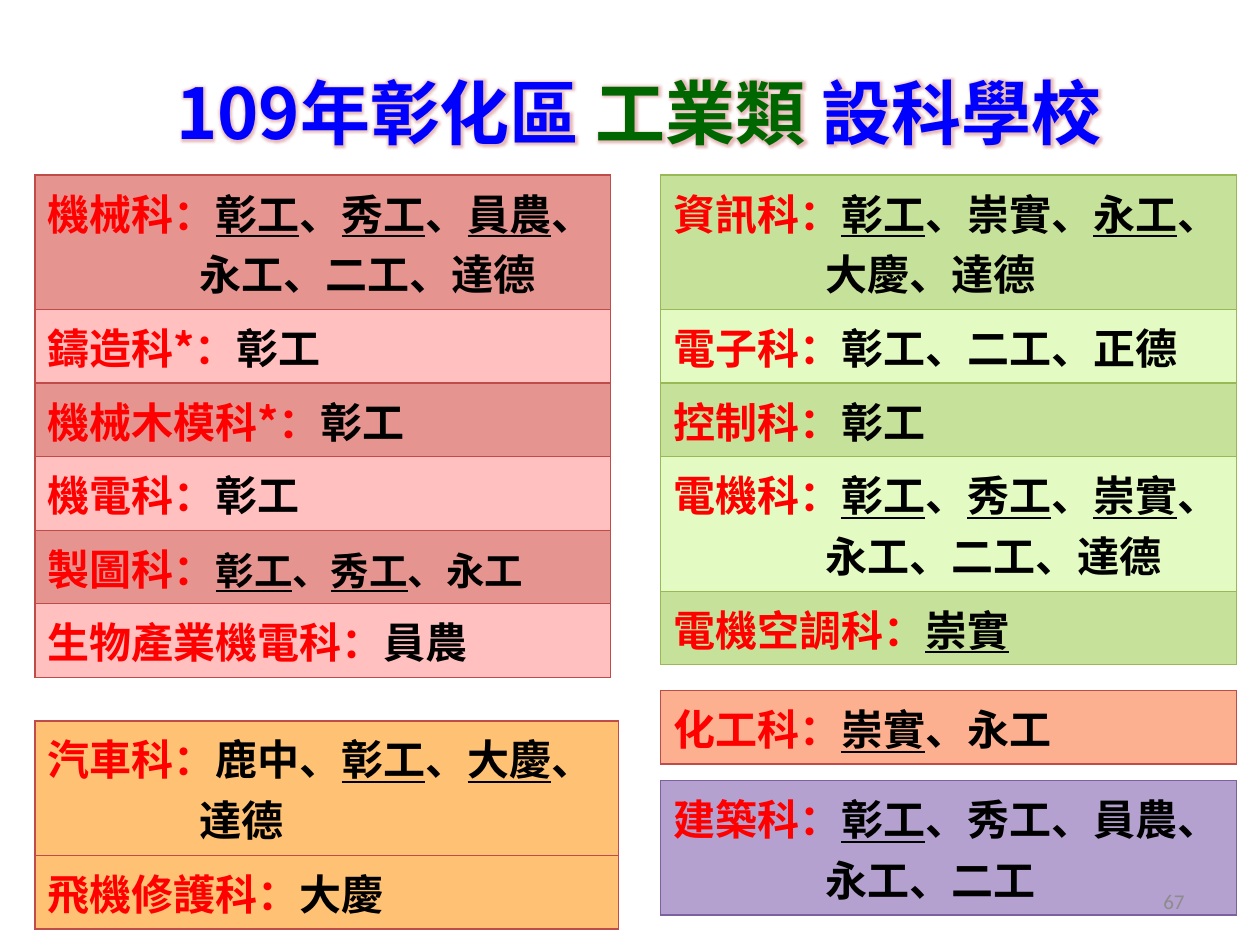
"""Build the slide of industrial departments and the schools that offer them."""
from dataclasses import dataclass

from lxml.etree import SubElement, fromstring
from pptx import Presentation
from pptx.dml.color import RGBColor as Rgb
from pptx.enum.text import MSO_ANCHOR as Anchor, PP_ALIGN as Align
from pptx.oxml.ns import nsdecls, qn
from pptx.util import Pt


@dataclass(frozen=True)
class Theme:
    cjk: str = "Noto Sans CJK SC"
    latin: str = "Calibri"
    title_size: float = 40
    body_size: float = 24
    small_size: float = 22
    number_size: float = 12
    blue: str = "0000FF"
    green: str = "006600"
    red: str = "FF0000"
    black: str = "000000"
    gray: str = "8C8C8C"
    glow: str = "C0504D"
    red_border: str = "BF4C48"
    green_border: str = "98B955"
    purple_border: str = "7D60A0"
    red_bands: tuple = ("E69490", "FFC0BF")
    green_bands: tuple = ("C6E19A", "E3FBC2")
    orange_bands: tuple = ("FFC174", "FFC174")
    coral_bands: tuple = ("FDB08F", "FDB08F")
    purple_bands: tuple = ("B4A1CF", "B4A1CF")


theme = Theme()


def write(para, text, size, color, font=theme.cjk, bold=True, underline=False):
    span = para.add_run()
    span.text = text
    span.font.size = Pt(size)
    span.font.bold = bold
    span.font.underline = underline
    span.font.color.rgb = Rgb.from_string(color)
    span.font.name = font
    SubElement(span.font._element, qn("a:ea"), typeface=font)
    return span


def paint(cell, fill, border):
    cell.fill.solid()
    cell.fill.fore_color.rgb = Rgb.from_string(fill)
    for place, side in enumerate(("lnL", "lnR", "lnT", "lnB")):
        line = fromstring(
            f'<a:{side} {nsdecls("a")} w="9525"><a:solidFill>'
            f'<a:srgbClr val="{border}"/></a:solidFill></a:{side}>')
        cell._tc.tcPr.insert(place, line)


deck = Presentation()
deck.slide_width, deck.slide_height = Pt(720), Pt(540)
page = deck.slides.add_slide(deck.slide_layouts[5])

title = page.shapes.title
title.left, title.top, title.width, title.height = Pt(41), Pt(36), Pt(648), Pt(55.5)
title.text_frame.vertical_anchor = Anchor.MIDDLE
heading = title.text_frame.paragraphs[0]
heading.alignment = Align.CENTER
for text, color in (("109年彰化區 ", theme.blue), ("工業類 ", theme.green),
                    ("設科學校", theme.blue)):
    span = write(heading, text, theme.title_size, color)
    glow = fromstring(
        f'<a:effectLst {nsdecls("a")}><a:glow rad="63500"><a:srgbClr val="{theme.glow}">'
        '<a:alpha val="40000"/></a:srgbClr></a:glow></a:effectLst>')
    span.font._element.find(qn("a:solidFill")).addnext(glow)

# Underscores enclose the underlined schools.
LEFT, RIGHT, WIDTH = 20, 377.5, 329
LINE, PADDING, HANG = 34.8, 7.2, 87
body, small = theme.body_size, theme.small_size
tables = [
    (LEFT, 100, WIDTH, theme.red_bands, theme.red_border, [
        ("機械科：", "_彰工_、_秀工_、_員農_、\n永工、二工、達德", body),
        ("鑄造科*：", "彰工", body),
        ("機械木模科*：", "彰工", body),
        ("機電科：", "彰工", body),
        ("製圖科：", "_彰工_、_秀工_、永工", small),
        ("生物產業機電科：", "員農", body)]),
    (RIGHT, 394.5, WIDTH, theme.coral_bands, theme.red_border, [
        ("化工科：", "_崇實_、永工", body)]),
    (LEFT, 412, 333.5, theme.orange_bands, theme.red_border, [
        ("汽車科：", "鹿中、_彰工_、_大慶_、\n達德", body),
        ("飛機修護科：", "大慶", body)]),
    (RIGHT, 100, WIDTH, theme.green_bands, theme.green_border, [
        ("資訊科：", "_彰工_、崇實、_永工_、\n大慶、達德", body),
        ("電子科：", "彰工、二工、正德", body),
        ("控制科：", "彰工", body),
        ("電機科：", "_彰工_、_秀工_、_崇實_、\n永工、二工、達德", body),
        ("電機空調科：", "_崇實_", body)]),
    (RIGHT, 446, WIDTH, theme.purple_bands, theme.purple_border, [
        ("建築科：", "_彰工_、秀工、員農、\n永工、二工", body)]),
]
for left, top, width, bands, border, rows in tables:
    heights = [LINE * (1 + schools.count("\n")) + PADDING for _, schools, _ in rows]
    table = page.shapes.add_table(len(rows), 1, Pt(left), Pt(top), Pt(width),
                                  Pt(sum(heights))).table
    table.first_row = table.horz_banding = False
    for index, (department, schools, size) in enumerate(rows):
        table.rows[index].height = Pt(heights[index])
        cell = table.cell(index, 0)
        paint(cell, bands[index % 2], border)
        para = cell.text_frame.paragraphs[0]
        if "\n" in schools:
            layout = para._p.get_or_add_pPr()
            layout.set("marL", str(Pt(HANG)))
            layout.set("indent", str(-Pt(HANG)))
        write(para, department, theme.body_size, theme.red)
        for number, line in enumerate(schools.split("\n")):
            if number:
                para.add_line_break()
            for part, text in enumerate(line.split("_")):
                if text:
                    write(para, text, size, theme.black, underline=part % 2 == 1)

box = page.shapes.add_textbox(Pt(516), Pt(500.5), Pt(168), Pt(28.75))
box.text_frame.word_wrap = True
box.text_frame.vertical_anchor = Anchor.MIDDLE
para = box.text_frame.paragraphs[0]
para.alignment = Align.RIGHT
write(para, "67", theme.number_size, theme.gray, font=theme.latin, bold=False)

deck.save("out.pptx")
